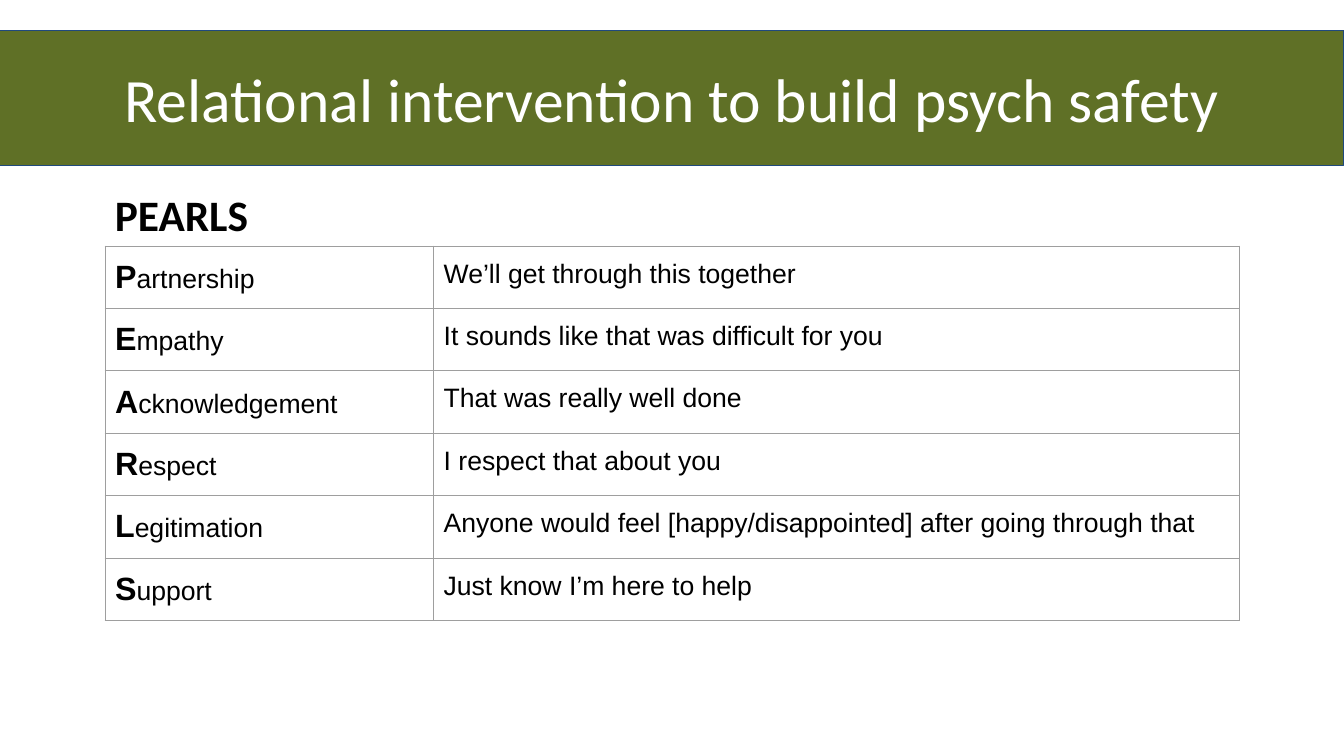
from pptx import Presentation
from pptx.dml.color import RGBColor
from pptx.enum.shapes import MSO_SHAPE
from pptx.enum.text import MSO_ANCHOR, PP_ALIGN
from pptx.oxml import parse_xml
from pptx.oxml.ns import nsdecls
from pptx.util import Inches, Pt

RECTANGLE = MSO_SHAPE.RECTANGLE
TOP, MIDDLE = MSO_ANCHOR.TOP, MSO_ANCHOR.MIDDLE
LEFT, CENTER = PP_ALIGN.LEFT, PP_ALIGN.CENTER

OLIVE = RGBColor(0x5F, 0x70, 0x26)
NAVY = RGBColor(0x1F, 0x49, 0x7D)
GREY = RGBColor(0x9E, 0x9E, 0x9E)
BLACK = RGBColor(0, 0, 0)
WHITE = RGBColor(0xFF, 0xFF, 0xFF)

# The slide is a grid of 64 columns by 100 rows
GRID_COLUMNS, GRID_ROWS = 64, 100
MARGIN = 5

PEARLS = [
    ("Partnership", "We’ll get through this together"),
    ("Empathy", "It sounds like that was difficult for you"),
    ("Acknowledgement", "That was really well done"),
    ("Respect", "I respect that about you"),
    ("Legitimation", "Anyone would feel [happy/disappointed] after going through that"),
    ("Support", "Just know I’m here to help"),
]


def add_text(paragraph, text, size, font="Arial", color=BLACK, bold=False, align=LEFT):
    paragraph.alignment = align
    run = paragraph.add_run()
    run.text = text
    run.font.size = Pt(size)
    run.font.name = font
    run.font.color.rgb = color
    run.font.bold = bold


def set_margins(target, horizontal, vertical):
    target.margin_left = target.margin_right = Inches(horizontal)
    target.margin_top = target.margin_bottom = Inches(vertical)


class SlideBuilder:
    heading_font = "Calibri"
    border_color = GREY
    border_width = Pt(0.75)

    def __init__(self, presentation):
        self.column = presentation.slide_width / GRID_COLUMNS
        self.row = presentation.slide_height / GRID_ROWS
        self.slide = presentation.slides.add_slide(presentation.slide_layouts[6])

    def box(self, left, top, width, height):
        return (round(left * self.column), round(top * self.row),
                round(width * self.column), round(height * self.row))

    def banner(self, text, *place):
        shape = self.slide.shapes.add_shape(RECTANGLE, *self.box(*place))
        shape.shadow.inherit = False
        shape.fill.solid()
        shape.fill.fore_color.rgb = OLIVE
        shape.line.color.rgb = NAVY
        shape.line.width = self.border_width
        frame = shape.text_frame
        frame.word_wrap = True
        frame.vertical_anchor = MIDDLE
        set_margins(frame, 0.1, 0.05)
        add_text(frame.paragraphs[0], text, 44, font=self.heading_font,
                 color=WHITE, align=CENTER)

    def heading(self, text, *place):
        frame = self.slide.shapes.add_textbox(*self.box(*place)).text_frame
        frame.word_wrap = True
        set_margins(frame, 0.1, 0.1)
        add_text(frame.paragraphs[0], text, 31, font=self.heading_font, bold=True)

    def border(self, cell):
        properties = cell._tc.get_or_add_tcPr()
        for position, side in enumerate(("lnL", "lnR", "lnT", "lnB")):
            properties.insert(position, parse_xml(
                f'<a:{side} {nsdecls("a")} w="{self.border_width}"><a:solidFill>'
                f'<a:srgbClr val="{self.border_color}"/></a:solidFill></a:{side}>'))

    def acronym_table(self, entries, left, top, widths, row_height):
        place = self.box(left, top, sum(widths), row_height * len(entries))
        table = self.slide.shapes.add_table(len(entries), len(widths), *place).table
        table.first_row = table.horz_banding = False
        for column, width in zip(table.columns, widths):
            column.width = round(width * self.column)
        for row, (word, phrase) in zip(table.rows, entries):
            for cell in row.cells:
                cell.fill.background()
                cell.vertical_anchor = TOP
                set_margins(cell, 0.1, 0.13)
                self.border(cell)
            word_paragraph, phrase_paragraph = (
                cell.text_frame.paragraphs[0] for cell in row.cells)
            add_text(word_paragraph, word[0], 23, bold=True)
            add_text(word_paragraph, word[1:], 19)
            add_text(phrase_paragraph, phrase, 19)


def main():
    presentation = Presentation()
    presentation.slide_width = Inches(13.33)
    presentation.slide_height = Inches(7.5)
    builder = SlideBuilder(presentation)

    # Acronym table
    builder.acronym_table(PEARLS, MARGIN, 32.55, widths=(15.65, 38.35), row_height=7.47)

    # Title banner across the full width
    builder.banner("Relational intervention to build psych safety",
                   0, 4, GRID_COLUMNS, 17.9)

    # Table heading
    builder.heading("PEARLS", MARGIN, 23.6, GRID_COLUMNS - 2 * MARGIN, 9.6)

    presentation.save("out.pptx")


if __name__ == "__main__":
    main()
